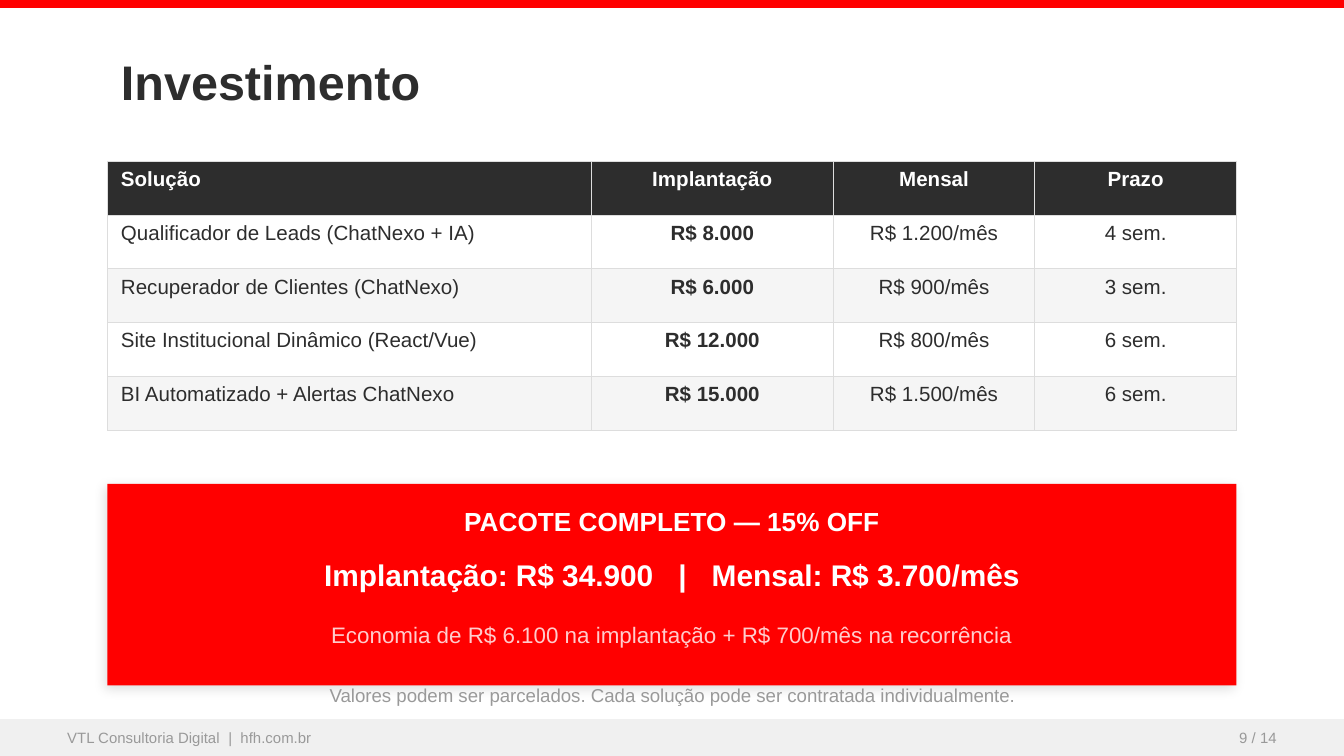
from lxml import etree
from pptx import Presentation, util as u
from pptx.dml.color import RGBColor
from pptx.enum import shapes, text
from pptx.oxml.ns import qn

SCALE = 4572
FONT = "Arial"
COLORS = {
    "red": "FF0000", "dark": "2D2D2D", "white": "FFFFFF", "pink": "FFCCCC",
    "gray": "999999", "band": "F5F5F5", "footer": "F0F0F0", "border": "DDDDDD",
    "shadow": "000000",
}
LEFT, CENTER, RIGHT = text.PP_ALIGN.LEFT, text.PP_ALIGN.CENTER, text.PP_ALIGN.RIGHT
SOLUTIONS = [
    ("Solução", "Implantação", "Mensal", "Prazo"),
    ("Qualificador de Leads (ChatNexo + IA)", "R$ 8.000", "R$ 1.200/mês", "4 sem."),
    ("Recuperador de Clientes (ChatNexo)", "R$ 6.000", "R$ 900/mês", "3 sem."),
    ("Site Institucional Dinâmico (React/Vue)", "R$ 12.000", "R$ 800/mês", "6 sem."),
    ("BI Automatizado + Alertas ChatNexo", "R$ 15.000", "R$ 1.500/mês", "6 sem."),
]
PACKAGE_LINES = [
    (20, ["PACOTE COMPLETO — 15% OFF"], 14, "white", True),
    (100, ["Implantação: R$ 34.900", " |", " Mensal: R$ 3.700/mês"], 16, "white", True),
    (190, ["Economia de R$ 6.100 na implantação + R$ 700/mês na recorrência"], 12, "pink", False),
]


def px(value):
    """Turn pixels into EMU."""
    return u.Emu(int(value * SCALE))


def color(name):
    """Look up a palette colour."""
    return RGBColor.from_string(COLORS[name])


def style(paragraph, size, ink, bold=False, align=LEFT):
    """Set the font and alignment of a paragraph."""
    paragraph.alignment = align
    paragraph.font.name = FONT
    paragraph.font.size = u.Pt(size)
    paragraph.font.bold = bold
    paragraph.font.color.rgb = color(ink)


def add_bar(slide, box, fill):
    """Add a plain filled rectangle."""
    shape = slide.shapes.add_shape(shapes.MSO_SHAPE.RECTANGLE, *map(px, box))
    shape.fill.solid()
    shape.fill.fore_color.rgb = color(fill)
    shape.line.fill.background()
    shape.shadow.inherit = False
    return shape


def add_label(slide, box, parts, size, ink, bold=False, align=CENTER, inset=None, tracking=0):
    """Add one line of text, tracking out its separator run."""
    frame = slide.shapes.add_textbox(*map(px, box)).text_frame
    frame.word_wrap = True
    frame.vertical_anchor = text.MSO_ANCHOR.MIDDLE
    if inset is not None:
        frame.margin_left = frame.margin_right = px(inset)
        frame.margin_top = frame.margin_bottom = px(inset)
    paragraph = frame.paragraphs[0]
    for part in parts:
        run = paragraph.add_run()
        run.text = part
        if part == " |":
            run.font._element.set("spc", str(tracking))
    style(paragraph, size, ink, bold, align)


def add_title(slide, box, title):
    """Place and format the title placeholder."""
    shape = slide.shapes.title
    shape.left, shape.top, shape.width, shape.height = map(px, box)
    frame = shape.text_frame
    frame.text = title
    frame.auto_size = text.MSO_AUTO_SIZE.NONE
    frame.vertical_anchor = text.MSO_ANCHOR.MIDDLE
    style(frame.paragraphs[0], 26, "dark", True)


def add_borders(cell):
    """Draw a thin border on all four sides of a cell."""
    properties = cell._tc.get_or_add_tcPr()
    for side in ("lnL", "lnR", "lnT", "lnB"):
        line = etree.SubElement(properties, qn(f"a:{side}"), w=str(u.Pt(0.5)))
        fill = etree.SubElement(line, qn("a:solidFill"))
        etree.SubElement(fill, qn("a:srgbClr"), val=COLORS["border"])


def add_price_table(slide, box, rows, widths):
    """Add the price table with a dark header and banded rows."""
    table = slide.shapes.add_table(len(rows), len(widths), *map(px, box)).table
    table.horz_banding = table.first_row = False
    for column, width in zip(table.columns, widths):
        column.width = px(width)
    for i, values in enumerate(rows):
        table.rows[i].height = px(box[3] / len(rows))
        for j, value in enumerate(values):
            cell = table.cell(i, j)
            cell.text = value
            add_borders(cell)
            if i % 2 and i:
                cell.fill.background()
            else:
                cell.fill.solid()
                cell.fill.fore_color.rgb = color("band" if i else "dark")
            style(cell.text_frame.paragraphs[0], 11, "dark" if i else "white",
                  i == 0 or j == 1, CENTER if j else LEFT)


def add_package(slide, box, lines):
    """Add the package offer panel with its soft shadow and text lines."""
    left, top, width, _ = box
    panel = add_bar(slide, box, "red")
    effects = panel._element.spPr.find(qn("a:effectLst"))
    shadow = etree.SubElement(effects, qn("a:outerShdw"), blurRad=str(u.Pt(6)),
                              dist=str(u.Pt(2)), dir="8100000", algn="bl", rotWithShape="0")
    tint = etree.SubElement(shadow, qn("a:srgbClr"), val=COLORS["shadow"])
    etree.SubElement(tint, qn("a:alpha"), val="12000")
    for offset, parts, size, ink, bold in lines:
        add_label(slide, (left, top + offset, width, 70), parts, size, ink, bold, tracking=890)


def add_footer(slide, box, parts, page):
    """Add the footer band with the firm and the page number."""
    left, top, width, height = box
    margin = 100
    add_bar(slide, box, "footer")
    add_label(slide, (left + margin, top, 1000, height), parts, 8, "gray",
              align=LEFT, inset=0, tracking=222)
    add_label(slide, (left + width - margin - 400, top, 400, height), [page], 8, "gray",
              align=RIGHT, inset=0)


def main():
    """Build and save the investment slide."""
    presentation = Presentation()
    presentation.slide_width, presentation.slide_height = px(2000), px(1125)
    slide = presentation.slides.add_slide(presentation.slide_layouts[5])
    left, width = 160, 1680
    add_bar(slide, (0, 0, 2000, 12), "red")
    add_title(slide, (left, 60, width, 120), "Investimento")
    add_price_table(slide, (left, 240, width, 400), SOLUTIONS, (720, 360, 300, 300))
    add_package(slide, (left, 720, width, 300), PACKAGE_LINES)
    add_label(slide, (left, 1010, width, 50),
              ["Valores podem ser parcelados. Cada solução pode ser contratada individualmente."],
              10, "gray")
    add_footer(slide, (0, 1070, 2000, 56),
               ["VTL Consultoria Digital", " |", " hfh.com.br"], "9 / 14")
    presentation.save("out.pptx")


if __name__ == "__main__":
    main()
